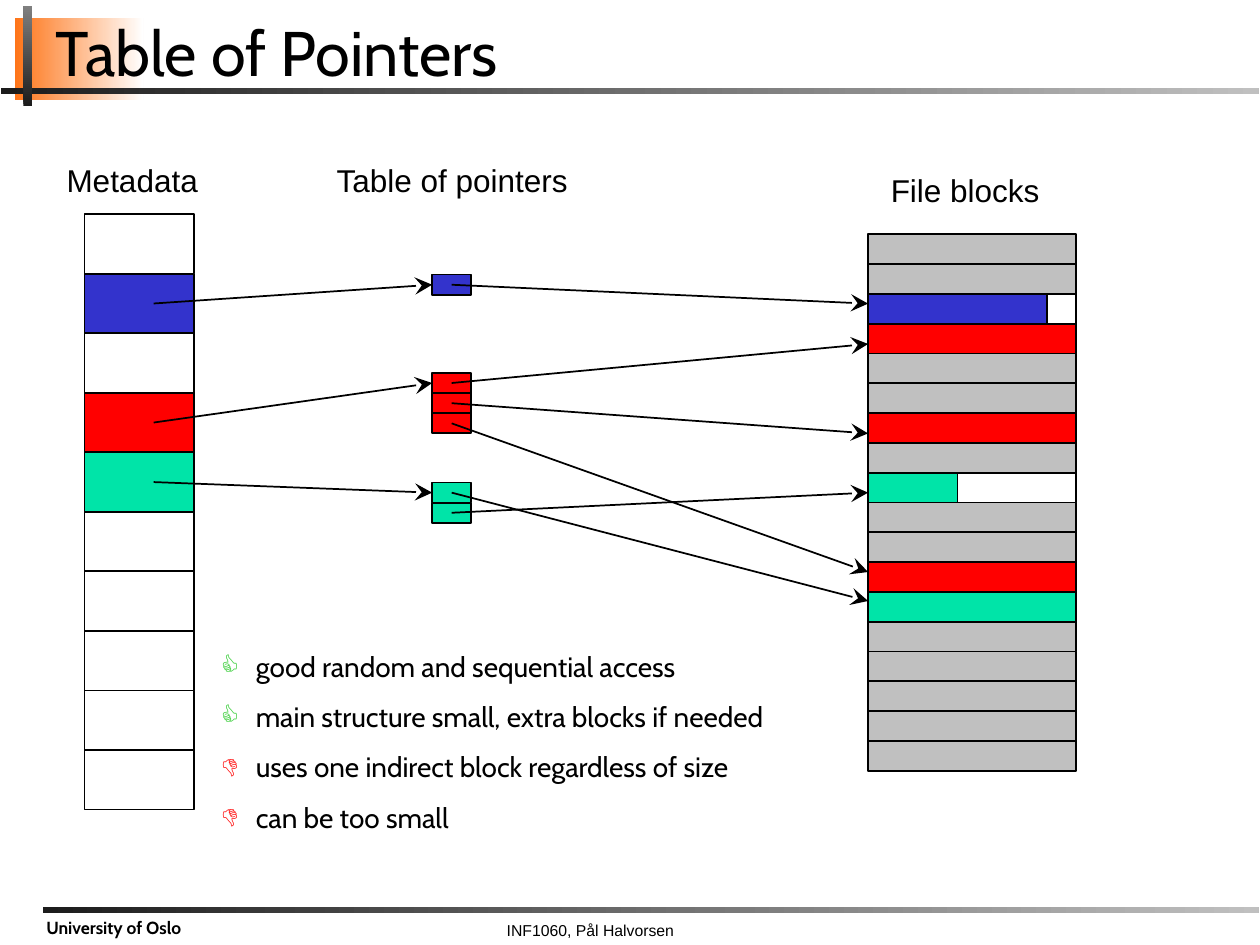
from lxml import etree
from pptx import Presentation
from pptx.dml.color import RGBColor
from pptx.enum.shapes import MSO_CONNECTOR, MSO_SHAPE
from pptx.enum.text import MSO_ANCHOR, MSO_AUTO_SIZE, PP_ALIGN
from pptx.oxml.ns import qn
from pptx.util import Inches, Pt

RECTANGLE = MSO_SHAPE.RECTANGLE
STRAIGHT = MSO_CONNECTOR.STRAIGHT
LEFT, CENTER = PP_ALIGN.LEFT, PP_ALIGN.CENTER
LEFT_SIDE = 1

BLACK = RGBColor(0x00, 0x00, 0x00)
WHITE = RGBColor(0xFF, 0xFF, 0xFF)
CHARCOAL = RGBColor(0x1C, 0x1C, 0x1C)
MID_GRAY = RGBColor(0x80, 0x80, 0x80)
GRAY = RGBColor(0xC0, 0xC0, 0xC0)
ORANGE = RGBColor(0xFE, 0x75, 0x19)
BLUE = RGBColor(0x33, 0x33, 0xCC)
RED = RGBColor(0xFF, 0x00, 0x00)
TEAL = RGBColor(0x00, 0xE4, 0xA8)
GREEN = RGBColor(0x33, 0xCC, 0x33)

THUMB_UP, THUMB_DOWN = "👍", "👎"

# Metadata column: ten entries, three in use
META_LEFT, META_TOP, META_WIDTH, META_HEIGHT = 0.67, 1.7, 0.87, 0.4725
META_COLORS = {1: BLUE, 3: RED, 4: TEAL}

# File blocks column: colour and used share of the blocks in use
BLOCK_LEFT, BLOCK_TOP, BLOCK_WIDTH, BLOCK_HEIGHT = 6.89, 1.86, 1.65, 0.2365
BLOCK_COUNT = 18
USED_BLOCKS = {2: (BLUE, 0.86), 3: (RED, 1), 6: (RED, 1), 8: (TEAL, 0.43),
               11: (RED, 1), 12: (TEAL, 1)}

# Pointer tables: metadata entry, top, and the height each pointer aims at
POINTER_LEFT, POINTER_WIDTH, POINTER_HEIGHT = 3.43, 0.31, 0.16
POINTER_TABLES = [(1, 2.18, [2.41]),
                  (3, 2.96, [2.73, 3.44, 4.54]),
                  (4, 3.83, [4.77, 3.91])]

PROS_AND_CONS = [
    (THUMB_UP, GREEN, "good random and sequential access"),
    (THUMB_UP, GREEN, "main structure small, extra blocks if needed"),
    (THUMB_DOWN, RED, "uses one indirect block regardless of size"),
    (THUMB_DOWN, RED, "can be too small"),
]


def place(shape, left, top, width, height):
    shape.left, shape.top = Inches(left), Inches(top)
    shape.width, shape.height = Inches(width), Inches(height)


def style(paragraph, font_name, size, align=LEFT, bold=False):
    paragraph.alignment = align
    font = paragraph.font
    font.name, font.size, font.bold = font_name, Pt(size), bold
    font.color.rgb = BLACK


def add_bar(slide, left, top, width, height, start, end, rotation=0):
    bar = slide.shapes.add_shape(RECTANGLE, Inches(left), Inches(top),
                                 Inches(width), Inches(height))
    bar.shadow.inherit = False
    bar.line.fill.background()
    bar.rotation = rotation
    bar.fill.gradient()
    bar.fill.gradient_angle = 0
    for stop, color in zip(bar.fill.gradient_stops, (start, end)):
        stop.color.rgb = color


def add_cell(slide, left, top, width, height, color=None):
    cell = slide.shapes.add_shape(RECTANGLE, Inches(left), Inches(top),
                                  Inches(width), Inches(height))
    cell.shadow.inherit = False
    cell.line.color.rgb = BLACK
    cell.line.width = Pt(1)
    if color is None:
        cell.fill.background()
    else:
        cell.fill.solid()
        cell.fill.fore_color.rgb = color
    return cell


def add_label(slide, text, left, top, width, height, size,
              font_name="Arial", align=CENTER, bold=False, margin_top=0.05):
    box = slide.shapes.add_textbox(Inches(left), Inches(top),
                                   Inches(width), Inches(height))
    frame = box.text_frame
    frame.word_wrap = False
    frame.margin_top = Inches(margin_top)
    frame.text = text
    style(frame.paragraphs[0], font_name, size, align, bold)


def add_arrow(slide, x1, y1, x2, y2):
    arrow = slide.shapes.add_connector(STRAIGHT, Inches(x1), Inches(y1),
                                       Inches(x2), Inches(y2))
    arrow.line.color.rgb = BLACK
    arrow.line.width = Pt(1)
    etree.SubElement(arrow.line._get_or_add_ln(), qn("a:tailEnd"),
                     type="stealth", w="lg", len="lg")
    etree.SubElement(arrow._element.spPr, qn("a:effectLst"))
    return arrow


def set_bullet(paragraph, char, color):
    props = paragraph._p.get_or_add_pPr()
    props.set("marL", str(Inches(0.28)))
    props.set("indent", str(-Inches(0.28)))
    bullet_color = etree.SubElement(props, qn("a:buClr"))
    etree.SubElement(bullet_color, qn("a:srgbClr"), val=str(color))
    etree.SubElement(props, qn("a:buFont"), typeface="Arial")
    etree.SubElement(props, qn("a:buChar"), char=char)


def add_frame(slide):
    add_bar(slide, 0.12, 0.14, 1.02, 0.65, ORANGE, WHITE)
    add_bar(slide, 0.01, 0.7, 9.98, 0.05, CHARCOAL, GRAY)
    add_bar(slide, -0.18, 0.41, 0.8, 0.07, CHARCOAL, MID_GRAY, rotation=270)
    add_bar(slide, 0.34, 7.2, 9.65, 0.05, CHARCOAL, GRAY)
    add_label(slide, "INF1060, Pål Halvorsen", 1.89, 7.28, 5.59, 0.23, 9,
              margin_top=0.03)
    add_label(slide, "University of Oslo", 0.27, 7.25, 1.63, 0.24, 10,
              "Cabin", LEFT, bold=True, margin_top=0.03)


def fill_title(title):
    place(title, 0.34, 0.14, 9.62, 0.61)
    frame = title.text_frame
    frame.text = "Table of Pointers"
    frame.auto_size = MSO_AUTO_SIZE.NONE
    frame.vertical_anchor = MSO_ANCHOR.BOTTOM
    frame.margin_right = Inches(0.04)
    frame.paragraphs[0].line_spacing = 0.8
    style(frame.paragraphs[0], "Cabin", 36)


def fill_list(body):
    place(body, 1.65, 4.97, 4.7, 1.7)
    frame = body.text_frame
    frame.text = "\n".join(text for _, _, text in PROS_AND_CONS)
    frame.auto_size = MSO_AUTO_SIZE.NONE
    frame.word_wrap = False
    for paragraph, (char, color, _) in zip(frame.paragraphs, PROS_AND_CONS):
        paragraph.line_spacing = 1.5
        paragraph.space_before = Pt(0)
        set_bullet(paragraph, char, color)
        style(paragraph, "Cabin", 16)


def add_metadata(slide):
    add_label(slide, "Metadata", 0.43, 1.23, 1.24, 0.4, 18)
    for row in range(10):
        add_cell(slide, META_LEFT, META_TOP + row * META_HEIGHT,
                 META_WIDTH, META_HEIGHT, META_COLORS.get(row))


def add_file_blocks(slide):
    add_label(slide, "File blocks", 6.97, 1.31, 1.38, 0.4, 18)
    for row in range(BLOCK_COUNT):
        top = BLOCK_TOP + row * BLOCK_HEIGHT
        color, share = USED_BLOCKS.get(row, (GRAY, 1))
        if share < 1:
            add_cell(slide, BLOCK_LEFT, top, BLOCK_WIDTH, BLOCK_HEIGHT)
        add_cell(slide, BLOCK_LEFT, top, BLOCK_WIDTH * share, BLOCK_HEIGHT, color)


def add_pointer_table(slide, entry, top, targets):
    pointers = [add_cell(slide, POINTER_LEFT, top + i * POINTER_HEIGHT,
                         POINTER_WIDTH, POINTER_HEIGHT, META_COLORS[entry])
                for i in range(len(targets))]
    # From the metadata entry to the first pointer
    entry_middle = META_TOP + (entry + 0.5) * META_HEIGHT
    link = add_arrow(slide, 1.22, entry_middle,
                     POINTER_LEFT, top + POINTER_HEIGHT / 2)
    link.end_connect(pointers[0], LEFT_SIDE)
    # From each pointer to its file block
    for i, target in enumerate(targets):
        add_arrow(slide, POINTER_LEFT + POINTER_WIDTH / 2,
                  top + (i + 0.5) * POINTER_HEIGHT, BLOCK_LEFT, target)


def main():
    prs = Presentation()
    prs.slide_width, prs.slide_height = Inches(10), Inches(7.5)
    slide = prs.slides.add_slide(prs.slide_layouts[1])
    add_frame(slide)
    title, body = slide.placeholders
    fill_title(title)
    fill_list(body)
    # Title and list stay in front of the gradient bars
    for holder in (title, body):
        slide.shapes._spTree.append(holder._element)

    add_metadata(slide)
    add_file_blocks(slide)
    add_label(slide, "Table of pointers", 2.56, 1.23, 2.06, 0.4, 18)
    for entry, top, targets in POINTER_TABLES:
        add_pointer_table(slide, entry, top, targets)
    prs.save("out.pptx")


if __name__ == "__main__":
    main()
